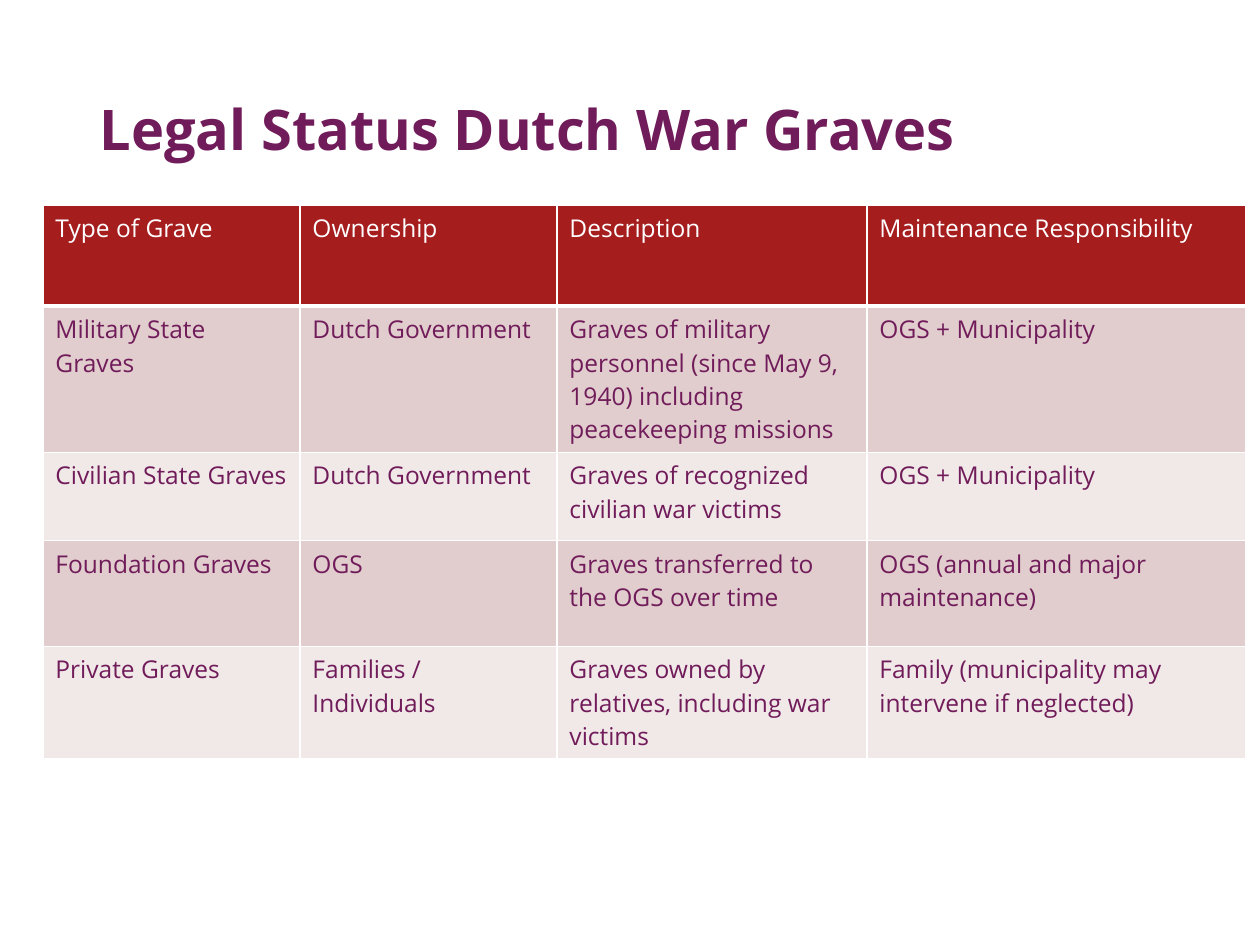
from lxml import etree
from pptx import Presentation
from pptx.dml.color import RGBColor
from pptx.enum.text import MSO_ANCHOR, PP_ALIGN
from pptx.oxml.ns import qn
from pptx.util import Inches, Pt

BOTTOM = MSO_ANCHOR.BOTTOM
LEFT = PP_ALIGN.LEFT
FONT = "Open Sans"
COLORS = {
    "text": "711C5A",
    "white": "FFFFFF",
    "header": "A61D1E",
    "dark_band": "E1CDCD",
    "light_band": "F1E8E8",
}

TITLE = "Legal Status Dutch War Graves"
GRAVES = [
    ("Type of Grave", "Ownership", "Description", "Maintenance Responsibility"),
    ("Military State Graves", "Dutch Government",
     "Graves of military personnel (since May 9, 1940) including peacekeeping missions",
     "OGS + Municipality"),
    ("Civilian State Graves", "Dutch Government",
     "Graves of recognized civilian war victims", "OGS + Municipality"),
    ("Foundation Graves", "OGS", "Graves transferred to the OGS over time",
     "OGS (annual and major maintenance)"),
    ("Private Graves", "Families / Individuals",
     "Graves owned by relatives, including war victims",
     "Family (municipality may intervene if neglected)"),
]
COLUMN_WIDTHS = [2.04, 2.04, 2.46, 3.01]
ROW_HEIGHTS = [0.8, 1.15, 0.7, 0.84, 0.82]


def color(name):
    return RGBColor.from_string(COLORS[name])


def format_font(paragraph, size, color_name, bold):
    font = paragraph.font
    font.name = FONT
    font.size = Pt(size)
    font.bold = bold
    font.color.rgb = color(color_name)


def add_borders(cell, bottom_width):
    properties = cell._tc.get_or_add_tcPr()
    for side, width in (("L", 1), ("R", 1), ("T", 1), ("B", bottom_width)):
        line = etree.SubElement(properties, qn(f"a:ln{side}"), w=str(Pt(width)))
        fill = etree.SubElement(line, qn("a:solidFill"))
        etree.SubElement(fill, qn("a:srgbClr"), val=COLORS["white"])


def add_title(slide):
    title = slide.shapes.title
    title.left, title.top = Inches(0.69), Inches(0.55)
    title.width, title.height = Inches(8.62), Inches(0.79)
    title.text_frame.text = TITLE
    title.text_frame.word_wrap = True
    title.text_frame.vertical_anchor = BOTTOM
    paragraph = title.text_frame.paragraphs[0]
    paragraph.alignment = LEFT
    paragraph.line_spacing = 0.9
    format_font(paragraph, 32, "text", True)


def add_graves_table(slide):
    table = slide.shapes.add_table(
        len(GRAVES), len(COLUMN_WIDTHS), Inches(0.34), Inches(1.63),
        Inches(sum(COLUMN_WIDTHS)), Inches(sum(ROW_HEIGHTS))).table
    for column, width in zip(table.columns, COLUMN_WIDTHS):
        column.width = Inches(width)
    for index, (row, height, texts) in enumerate(zip(table.rows, ROW_HEIGHTS, GRAVES)):
        row.height = Inches(height)
        is_header = index == 0
        band = "header" if is_header else "dark_band" if index % 2 else "light_band"
        for cell, text in zip(row.cells, texts):
            cell.text = text
            add_borders(cell, 3 if is_header else 1)
            cell.fill.solid()
            cell.fill.fore_color.rgb = color(band)
            format_font(cell.text_frame.paragraphs[0], 14,
                        "white" if is_header else "text", False)


def main():
    presentation = Presentation()
    presentation.slide_width, presentation.slide_height = Inches(10), Inches(7.5)
    slide = presentation.slides.add_slide(presentation.slide_layouts[5])
    add_title(slide)
    add_graves_table(slide)
    presentation.save("out.pptx")


if __name__ == "__main__":
    main()
